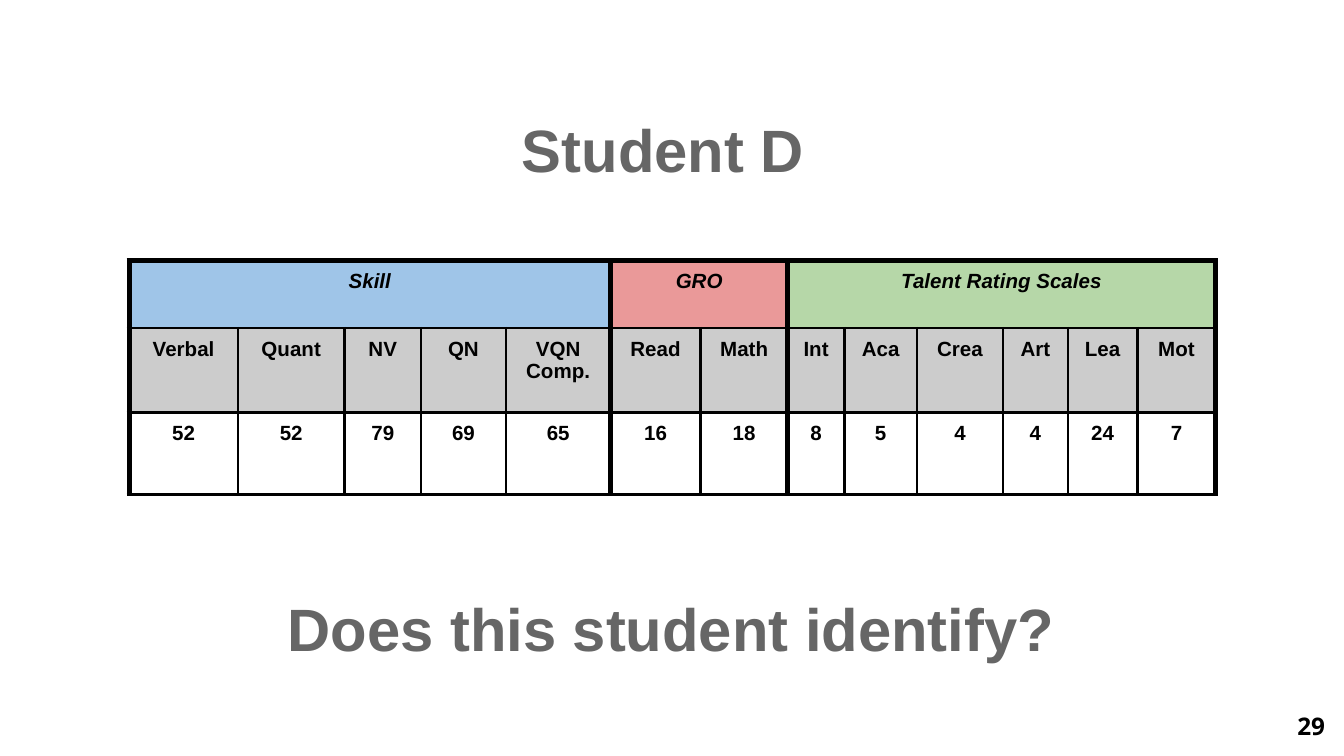
from dataclasses import dataclass

from lxml import etree
from pptx import Presentation
from pptx.dml.color import RGBColor
from pptx.enum import text
from pptx.oxml import ns
from pptx.util import Cm, Pt


@dataclass(frozen=True)
class Theme:
    font: str = "Arial"
    number_font: str = "Open Sans"
    heading: str = "666666"
    ink: str = "000000"
    label_fill: str = "CCCCCC"
    score_fill: str = "FFFFFF"
    heading_size: float = 32
    table_size: float = 11
    number_size: float = 13
    thin: float = 1.5
    thick: float = 3


theme = Theme()


def write(frame, words, size, color, align, anchor, inset, font=theme.font, italic=False):
    """Fill a text frame or table cell with one bold run."""
    frame.margin_left = frame.margin_right = Cm(inset)
    frame.margin_top = frame.margin_bottom = Cm(inset)
    frame.vertical_anchor = anchor
    paragraph = getattr(frame, "text_frame", frame).paragraphs[0]
    paragraph.alignment = align
    run = paragraph.add_run()
    run.text = words
    run.font.name, run.font.size = font, Pt(size)
    run.font.bold, run.font.italic = True, italic
    run.font.color.rgb = RGBColor.from_string(color)


def add_borders(cell, **widths):
    """Draw the L, R, T and B edges of a cell, widths in points."""
    properties = cell._tc.get_or_add_tcPr()
    for side in "LRTB":
        line = etree.SubElement(properties, ns.qn(f"a:ln{side}"), w=str(Pt(widths[side])))
        fill = etree.SubElement(line, ns.qn("a:solidFill"))
        etree.SubElement(fill, ns.qn("a:srgbClr"), val=theme.ink)


prs = Presentation()
prs.slide_width, prs.slide_height = Cm(25.4), Cm(14.29)
slide = prs.slides.add_slide(prs.slide_layouts[5])

# Score table: (test, fill, [(label, score, column width in cm)])
tests = [
    ("Skill", "9FC5E8", [("Verbal", 52, 2.06), ("Quant", 52, 2.01), ("NV", 79, 1.45),
                         ("QN", 69, 1.6), ("VQN Comp.", 65, 1.98)]),
    ("GRO", "EA9999", [("Read", 16, 1.7), ("Math", 18, 1.65)]),
    ("Talent Rating Scales", "B6D7A8", [("Int", 8, 1.07), ("Aca", 5, 1.37), ("Crea", 4, 1.63),
                                        ("Art", 4, 1.22), ("Lea", 24, 1.32), ("Mot", 7, 1.47)]),
]
row_heights = [1.27, 1.6, 1.55]
widths = [width for _, _, parts in tests for _, _, width in parts]
scores = slide.shapes.add_table(len(row_heights), len(widths), Cm(2.44), Cm(4.93),
                                Cm(sum(widths)), Cm(sum(row_heights))).table
scores.first_row = scores.horz_banding = False
for row, height in zip(scores.rows, row_heights):
    row.height = Cm(height)

column = 0
for test, test_fill, parts in tests:
    first, last = column, column + len(parts) - 1
    for label, score, width in parts:
        scores.columns[column].width = Cm(width)
        fills = [test_fill, theme.label_fill, theme.score_fill]
        for row, (words, fill) in enumerate(zip([test, label, str(score)], fills)):
            cell = scores.cell(row, column)
            add_borders(cell,
                        L=theme.thick if row == 0 or column == first else theme.thin,
                        R=theme.thick if row == 0 or column == last else theme.thin,
                        T=theme.thick if row == 0 else theme.thin,
                        B=theme.thin)
            cell.fill.solid()
            cell.fill.fore_color.rgb = RGBColor.from_string(fill)
            if row > 0 or column == first:
                write(cell, words, theme.table_size, theme.ink, text.PP_ALIGN.CENTER,
                      text.MSO_ANCHOR.TOP, 0.18, italic=row == 0)
        column += 1
    scores.cell(0, first).merge(scores.cell(0, last))

# Headings above and below the table
student = slide.shapes.title
question = slide.shapes.add_textbox(0, 0, 0, 0)
for heading, words, top in [(student, "Student D ", 1.65),
                            (question, "Does this student identify?", 10.72)]:
    heading.left, heading.top, heading.width, heading.height = Cm(4.22), Cm(top), Cm(16.94), Cm(2.08)
    heading.text_frame.word_wrap = True
    heading.text_frame.auto_size = text.MSO_AUTO_SIZE.NONE
    write(heading.text_frame, words, theme.heading_size, theme.heading,
          text.PP_ALIGN.CENTER, text.MSO_ANCHOR.BOTTOM, 0.25)

page_number = slide.shapes.add_textbox(Cm(23.77), Cm(13.18), Cm(1.52), Cm(1.09))
page_number.text_frame.word_wrap = True
write(page_number.text_frame, "29", theme.number_size, theme.ink, text.PP_ALIGN.RIGHT,
      text.MSO_ANCHOR.MIDDLE, 0.25, font=theme.number_font)

prs.save("out.pptx")
